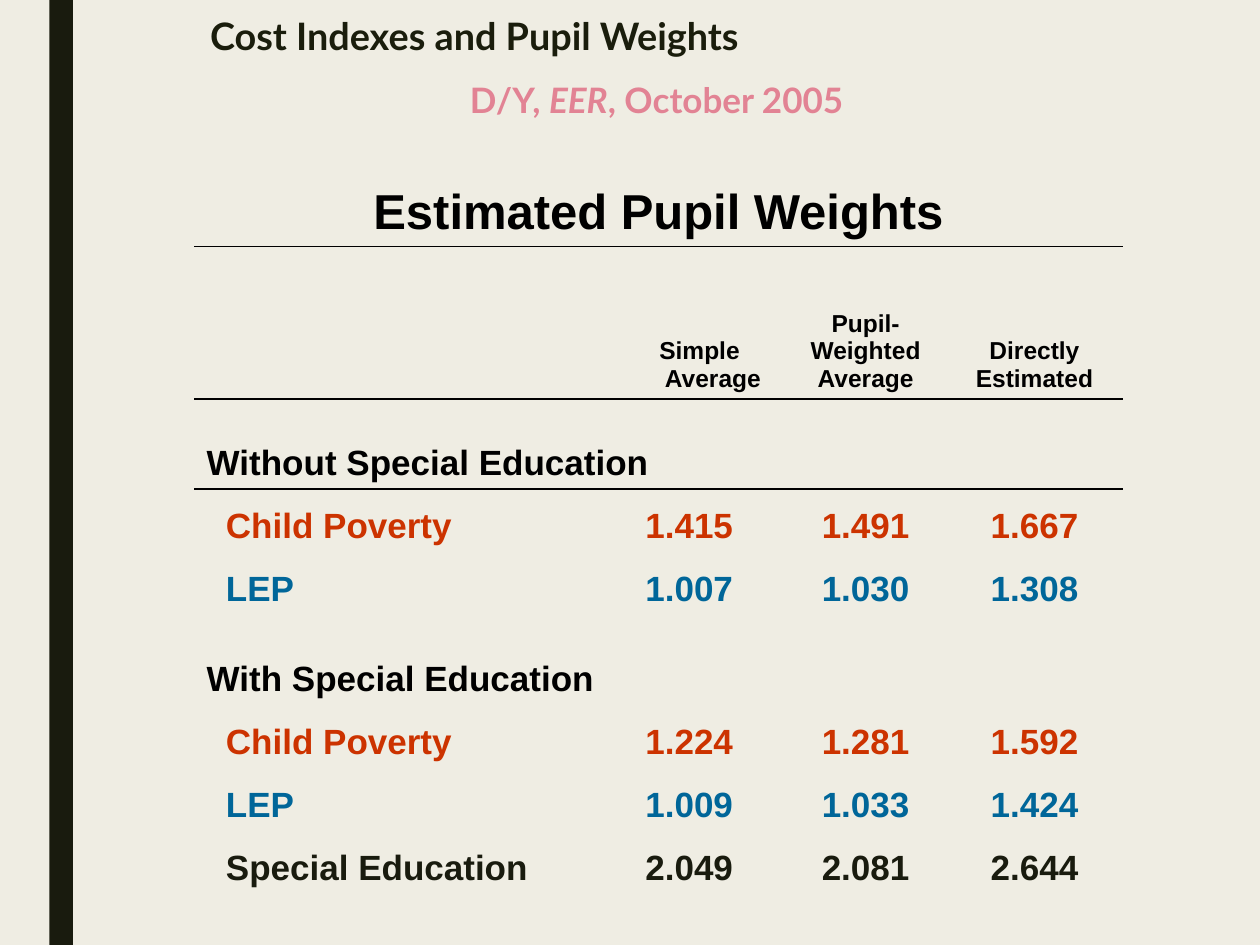
import pptx
import pptx.dml.color
import pptx.enum.shapes
import pptx.enum.text
import pptx.oxml
import pptx.oxml.ns
import pptx.util

Pt = pptx.util.Pt
RGBColor = pptx.dml.color.RGBColor
PP_ALIGN = pptx.enum.text.PP_ALIGN
ANCHOR = pptx.enum.text.MSO_ANCHOR

CREAM = RGBColor(0xEF, 0xED, 0xE3)
BAR = RGBColor(0x19, 0x1B, 0x0E)
TITLE = RGBColor(0x1A, 0x1D, 0x0C)
PINK = RGBColor(0xE2, 0x83, 0x94)
BLACK = RGBColor(0, 0, 0)
RED = RGBColor(0xCC, 0x33, 0x00)
BLUE = RGBColor(0x00, 0x66, 0x99)
NO_STYLE_NO_GRID = "{2D5ABB26-0587-4C30-8999-92F81FD0307C}"


def add_text(p, text, size=20, color=BLACK, font="Arial", italic=False,
             align=PP_ALIGN.LEFT, margin=0, indent=0):
    """Append a bold run to paragraph p and set the paragraph's layout."""
    p.alignment = align
    pPr = p._p.get_or_add_pPr()
    pPr.set("marL", str(Pt(margin)))
    pPr.set("indent", str(Pt(indent)))
    r = p.add_run()
    r.text = text
    r.font.size = Pt(size)
    r.font.name = font
    r.font.bold = True
    r.font.italic = italic
    r.font.color.rgb = color


def add_rule(cell, edge):
    """Draw a 1 pt black border on one edge of the cell: lnT or lnB."""
    ns = pptx.oxml.ns.nsdecls("a")
    line = pptx.oxml.parse_xml(
        f'<a:{edge} {ns} w="{Pt(1)}"><a:solidFill><a:srgbClr val="{BLACK}"/>'
        f"</a:solidFill></a:{edge}>")
    tcPr = cell._tc.get_or_add_tcPr()
    tcPr.insert(len(tcPr.findall(pptx.oxml.ns.qn("a:lnT"))), line)


prs = pptx.Presentation()
prs.slide_width, prs.slide_height = Pt(720), Pt(540)
slide = prs.slides.add_slide(prs.slide_layouts[6])
slide.background.fill.solid()
slide.background.fill.fore_color.rgb = CREAM

bar = slide.shapes.add_shape(pptx.enum.shapes.MSO_SHAPE.RECTANGLE,
                             Pt(28.2), 0, Pt(13.5), Pt(540))
bar.shadow.inherit = False
bar.fill.solid()
bar.fill.fore_color.rgb = BAR
bar.line.fill.background()

# Heading and source line
tf = slide.shapes.add_textbox(Pt(113), Pt(5.8), Pt(590), Pt(32.4)).text_frame
tf.word_wrap = True
tf.vertical_anchor = ANCHOR.MIDDLE
p = tf.paragraphs[0]
p.line_spacing = 0.89
add_text(p, "Cost Indexes and Pupil Weights", size=21.6, color=TITLE, font="Lato")

tf = slide.shapes.add_textbox(Pt(48), Pt(43.2), Pt(648), Pt(36)).text_frame
tf.word_wrap = True
p = tf.paragraphs[0]
p.line_spacing = 0.94
for text, italic in (("D/Y, ", False), ("EER", True), (", October 2005", False)):
    add_text(p, text, color=PINK, font="Lato", italic=italic,
             align=PP_ALIGN.CENTER, margin=28.8, indent=-22.3)

# Table of weights
HEADERS = ["Simple Average", "Pupil-\nWeighted\nAverage", "Directly\nEstimated"]
ROWS = [
    ("Without Special Education", BLACK, []),
    ("Child Poverty", RED, ["1.415", "1.491", "1.667"]),
    ("LEP", BLUE, ["1.007", "1.030", "1.308"]),
    ("With Special Education", BLACK, []),
    ("Child Poverty", RED, ["1.224", "1.281", "1.592"]),
    ("LEP", BLUE, ["1.009", "1.033", "1.424"]),
    ("Special Education", BAR, ["2.049", "2.081", "2.644"]),
]
COL_WIDTHS = [228.3, 109.4, 92.2, 100.8]
ROW_HEIGHTS = [39, 87.1] + [36 if values else 51.6 for _, _, values in ROWS]

frame = slide.shapes.add_table(len(ROW_HEIGHTS), len(COL_WIDTHS), Pt(110.9), Pt(100),
                               Pt(sum(COL_WIDTHS)), Pt(sum(ROW_HEIGHTS)))
table = frame.table
table.first_row = table.horz_banding = False
table._tbl.tblPr.find(pptx.oxml.ns.qn("a:tableStyleId")).text = NO_STYLE_NO_GRID
for col, width in zip(table.columns, COL_WIDTHS):
    col.width = Pt(width)
for row, height in zip(table.rows, ROW_HEIGHTS):
    row.height = Pt(height)
for cell in table.iter_cells():
    cell.fill.background()
    cell.vertical_anchor = ANCHOR.BOTTOM
for c in range(len(COL_WIDTHS)):
    for r in (0, 1):
        add_rule(table.cell(r, c), "lnB")
        add_rule(table.cell(r + 1, c), "lnT")

table.cell(0, 0).merge(table.cell(0, 3))
add_text(table.cell(0, 0).text_frame.paragraphs[0], "Estimated Pupil Weights",
         size=28, align=PP_ALIGN.CENTER)

for c, header in enumerate(HEADERS, 1):
    tf = table.cell(1, c).text_frame
    hanging = {"margin": 27, "indent": -15.3} if c == 1 else {}
    for i, line in enumerate(header.split("\n")):
        p = tf.add_paragraph() if i else tf.paragraphs[0]
        add_text(p, line, size=14, align=PP_ALIGN.CENTER, **hanging)

for r, (label, color, values) in enumerate(ROWS, 2):
    if not values:
        table.cell(r, 0).merge(table.cell(r, 1))
    add_text(table.cell(r, 0).text_frame.paragraphs[0], label, color=color,
             margin=11 if values else 0)
    for c, value in enumerate(values, 1):
        add_text(table.cell(r, c).text_frame.paragraphs[0], value, color=color,
                 align=PP_ALIGN.CENTER)

prs.save("out.pptx")
